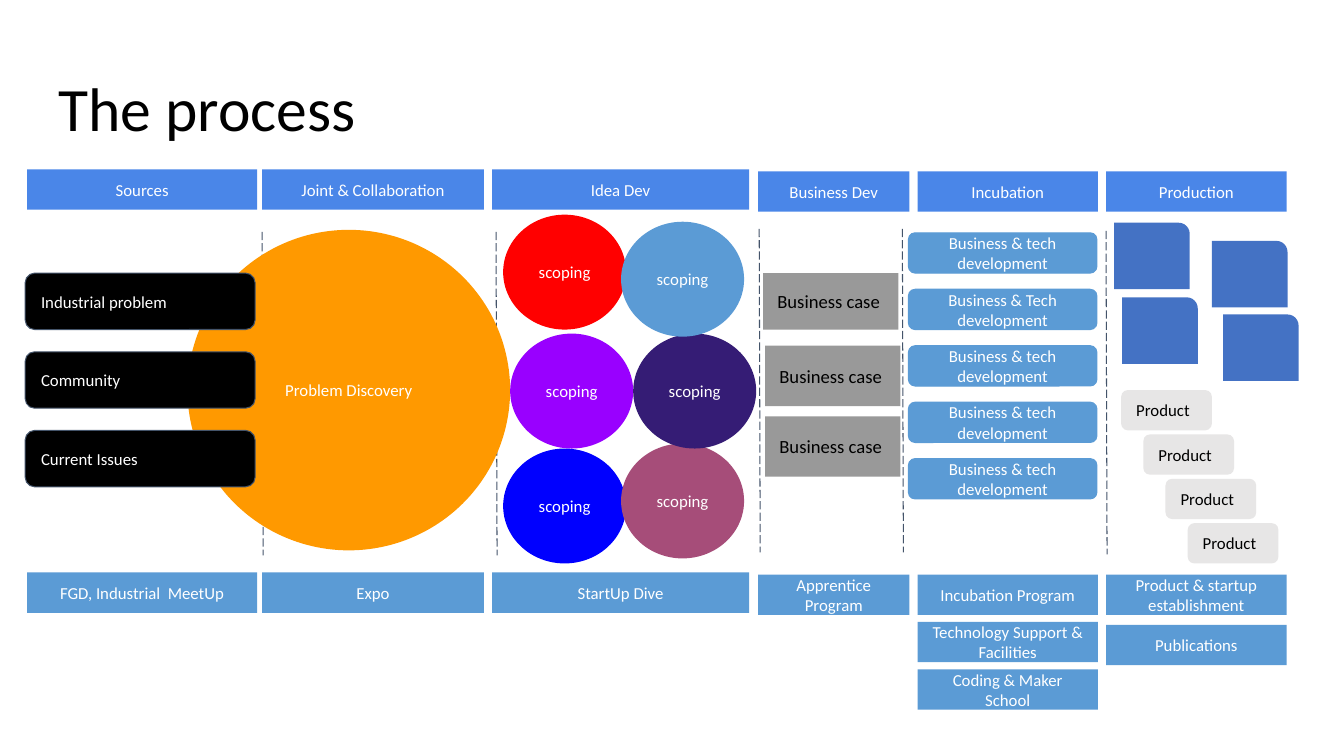
from lxml import etree
from pptx import Presentation
from pptx.dml.color import RGBColor
from pptx.enum.dml import MSO_LINE
from pptx.enum.shapes import MSO_CONNECTOR, MSO_SHAPE
from pptx.enum.text import MSO_ANCHOR, MSO_AUTO_SIZE, PP_ALIGN
from pptx.oxml.ns import qn
from pptx.util import Inches, Pt

RECTANGLE = MSO_SHAPE.RECTANGLE
ROUNDED = MSO_SHAPE.ROUNDED_RECTANGLE
ONE_ROUNDED = MSO_SHAPE.ROUND_1_RECTANGLE
OVAL = MSO_SHAPE.OVAL
STRAIGHT = MSO_CONNECTOR.STRAIGHT
LONG_DASH = MSO_LINE.LONG_DASH
LEFT, CENTER = PP_ALIGN.LEFT, PP_ALIGN.CENTER
TOP, MIDDLE = MSO_ANCHOR.TOP, MSO_ANCHOR.MIDDLE
NO_AUTOFIT = MSO_AUTO_SIZE.NONE

FONT = "Calibri"
BLACK, WHITE = "000000", "FFFFFF"
SLATE, HEADER, SKY, ROYAL = "44546A", "4A86E8", "5B9BD5", "4472C4"
GREY, PALE, ORANGE = "999999", "E7E6E6", "FF9900"
BAR_HEIGHT = 0.4

STAGES = [
    (0.27, 1.68, 2.28, "Sources", ["FGD, Industrial  MeetUp"], 0),
    (2.6, 1.68, 2.2, "Joint & Collaboration", ["Expo"], 0),
    (4.88, 1.68, 2.55, "Idea Dev", ["StartUp Dive"], 0),
    (7.52, 1.7, 1.5, "Business Dev", ["Apprentice Program"], 0),
    (9.1, 1.7, 1.79, "Incubation",
     ["Incubation Program", "Technology Support & Facilities", "Coding & Maker School"], 0.47),
    (10.97, 1.7, 1.79, "Production",
     ["Product & startup establishment", "Publications"], 0.5),
]
DIVIDERS = [(4.92, 2.3), (2.6, 2.3), (7.53, 2.27), (8.95, 2.27), (10.97, 2.29)]
SOURCES = ["Industrial problem", "Community", "Current Issues"]
SCOPES = [
    (4.99, 2.13, "FF0000"), (5.06, 3.31, "9900FF"), (4.99, 4.45, "0000FF"),
    (6.16, 4.4, "A64D79"), (6.28, 3.31, "351C75"), (6.16, 2.2, SKY),
]
INCUBATIONS = [f"Business & {word} development" for word in ("tech", "Tech", "tech", "tech", "tech")]
CASES = [(7.57, 2.71, 0.56), (7.59, 3.43, 0.6), (7.59, 4.13, 0.6)]
STARTUPS = [(11.05, 2.21), (12.02, 2.39), (11.13, 2.95), (12.13, 3.12)]


def rgb(value):
    return RGBColor.from_string(value)


class ProcessSlide:
    """Draws the elements of the process slide in one shared style."""

    def __init__(self, presentation):
        self.slide = presentation.slides.add_slide(presentation.slide_layouts[5])

    def set_text(self, shape, text, color, size=12, align=CENTER, anchor=MIDDLE):
        frame = shape.text_frame
        frame.text = text
        frame.word_wrap = True
        frame.auto_size = NO_AUTOFIT
        frame.vertical_anchor = anchor
        frame.margin_left = frame.margin_right = Inches(0.13)
        frame.margin_top = frame.margin_bottom = Inches(0.13)
        paragraph = frame.paragraphs[0]
        paragraph.alignment = align
        font = paragraph.runs[0].font
        font.name, font.size = FONT, Pt(size)
        font.color.rgb = rgb(color)
        return paragraph

    def title(self, text, left, top, width, height):
        shape = self.slide.shapes.title
        shape.left, shape.top = Inches(left), Inches(top)
        shape.width, shape.height = Inches(width), Inches(height)
        self.set_text(shape, text, BLACK, 44, LEFT, TOP).line_spacing = 0.9

    def block(self, kind, left, top, width, height, fill, text="", color=WHITE,
              size=12, align=CENTER, outline=None):
        shape = self.slide.shapes.add_shape(
            kind, Inches(left), Inches(top), Inches(width), Inches(height))
        shape.shadow.inherit = False
        shape.fill.solid()
        shape.fill.fore_color.rgb = rgb(fill)
        if outline:
            shape.line.color.rgb = rgb(outline)
            shape.line.width = Pt(0.75)
        else:
            shape.line.fill.background()
        if text:
            self.set_text(shape, text, color, size, align)

    def divider(self, left, top):
        connector = self.slide.shapes.add_connector(
            STRAIGHT, Inches(left), Inches(top), Inches(left + 0.01), Inches(top + 3.21))
        connector.line.color.rgb = rgb(SLATE)
        connector.line.width = Pt(0.75)
        connector.line.dash_style = LONG_DASH
        etree.SubElement(connector._element.spPr, qn("a:effectLst"))


def main():
    presentation = Presentation()
    presentation.slide_width, presentation.slide_height = Inches(13.33), Inches(7.5)
    process = ProcessSlide(presentation)
    process.title("The process", 0.45, 0.65, 12.42, 0.84)

    for left, top in DIVIDERS:
        process.divider(left, top)
    process.block(OVAL, 1.86, 2.28, 3.2, 3.18, ORANGE, "Problem Discovery")
    for row, text in enumerate(SOURCES):
        process.block(ROUNDED, 0.25, 2.71 + 0.78 * row, 2.28, 0.56, BLACK, text,
                      align=LEFT, outline=SLATE)
    for left, top, fill in SCOPES:
        process.block(OVAL, left, top, 1.22, 1.14, fill, "scoping")
    for row, text in enumerate(INCUBATIONS):
        process.block(ROUNDED, 9.01, 2.31 + 0.56 * row, 1.87, BAR_HEIGHT, SKY, text, outline=SKY)
    for left, top, height in CASES:
        process.block(RECTANGLE, left, top, 1.34, height, GREY, "Business case ", BLACK, 13.3)

    for left, top, width, name, programs, step in STAGES:
        process.block(RECTANGLE, left, top, width, BAR_HEIGHT, HEADER, name)
        for row, program in enumerate(programs):
            process.block(RECTANGLE, left, top + 4 + step * row, width, BAR_HEIGHT, SKY, program)

    for left, top in STARTUPS:
        process.block(ONE_ROUNDED, left, top, 0.75, 0.66, ROYAL)
    for row in range(4):
        process.block(ROUNDED, 11.12 + 0.22 * row, 3.87 + 0.44 * row, 0.9, BAR_HEIGHT,
                      PALE, "Product", BLACK, align=LEFT)

    presentation.save("out.pptx")


if __name__ == "__main__":
    main()
